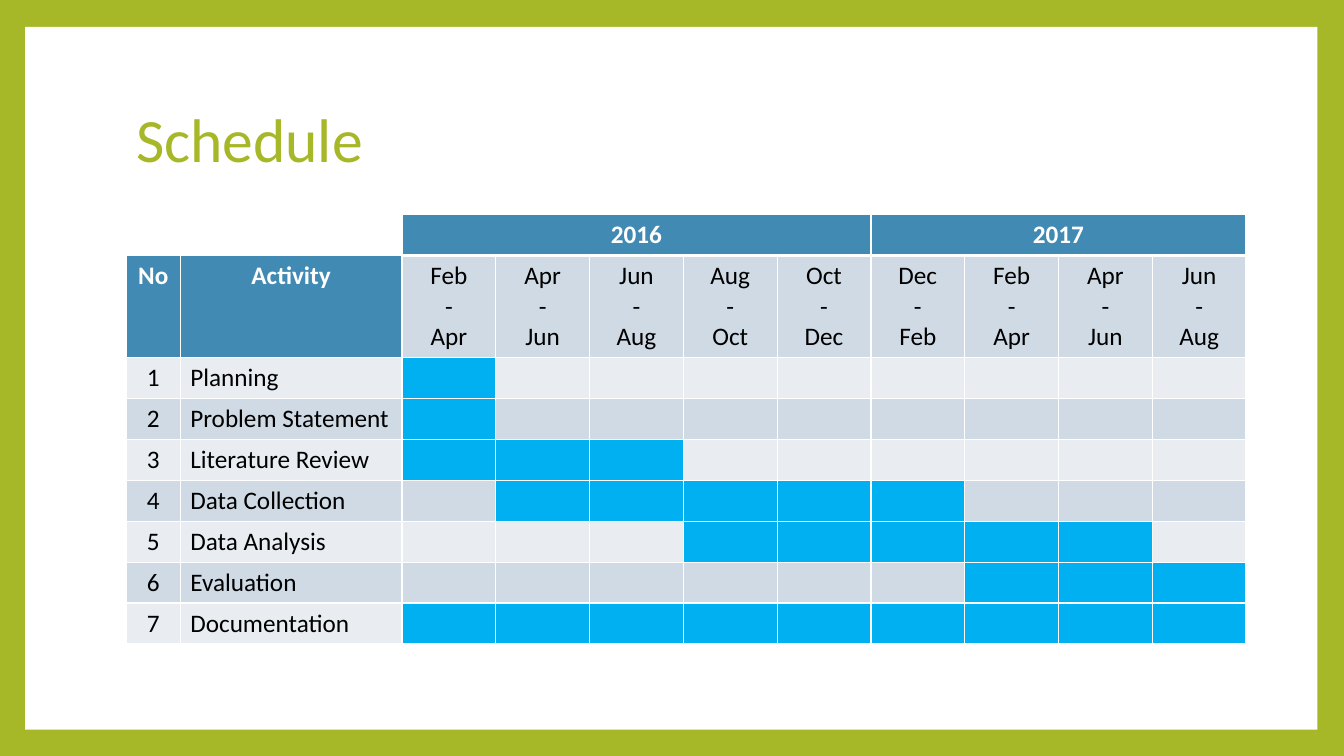
from lxml import etree
from pptx import Presentation
from pptx.dml.color import RGBColor
from pptx.enum.shapes import MSO_SHAPE
from pptx.enum.text import MSO_ANCHOR, PP_ALIGN
from pptx.oxml.ns import qn
from pptx.util import Pt

LEFT, CENTER = PP_ALIGN.LEFT, PP_ALIGN.CENTER
MIDDLE = MSO_ANCHOR.MIDDLE
RECTANGLE = MSO_SHAPE.RECTANGLE

COLORS = {
    "green": "A6B727",
    "white": "FFFFFF",
    "black": "000000",
    "header": "418AB3",
    "band_dark": "CFDAE5",
    "band_light": "E9EDF2",
    "bar": "00B0F0",
}
FONT = "Calibri"

MONTHS = ["Feb", "Apr", "Jun", "Aug", "Oct", "Dec"]
PERIOD_COUNT = 9
FIRST_PERIOD_COLUMN = 2
FIRST_ACTIVITY_ROW = 2
# Year, first and last period
YEARS = [("2016", 0, 4), ("2017", 5, 8)]
# Activity, first and last period
ACTIVITIES = [
    ("Planning", 0, 0),
    ("Problem Statement", 0, 0),
    ("Literature Review", 0, 2),
    ("Data Collection", 1, 5),
    ("Data Analysis", 3, 7),
    ("Evaluation", 6, 8),
    ("Documentation", 0, 8),
]


def write(text_frame, text, size=18, color="black", bold=False, align=CENTER):
    text_frame.text = text
    text_frame.vertical_anchor = MIDDLE
    for paragraph in text_frame.paragraphs:
        paragraph.alignment = align
        font = paragraph.runs[0].font
        font.name = FONT
        font.size = Pt(size)
        font.bold = bold
        font.color.rgb = RGBColor.from_string(COLORS[color])


def style_cell(cell, fill, borders):
    """Fill a cell and draw its white borders, given as {side: points}."""
    properties = cell._tc.get_or_add_tcPr()
    for side in "LRTB":
        if side in borders:
            line = etree.SubElement(properties, qn(f"a:ln{side}"), w=str(Pt(borders[side])))
            line_fill = etree.SubElement(line, qn("a:solidFill"))
            etree.SubElement(line_fill, qn("a:srgbClr"), val=COLORS["white"])
    cell.fill.solid()
    cell.fill.fore_color.rgb = RGBColor.from_string(COLORS[fill])


presentation = Presentation()
presentation.slide_width, presentation.slide_height = Pt(960), Pt(540)
slide = presentation.slides.add_slide(presentation.slide_layouts[5])
slide.background.fill.solid()
slide.background.fill.fore_color.rgb = RGBColor.from_string(COLORS["green"])

# Title on a white panel
title = slide.shapes.title
title.left, title.top, title.width, title.height = Pt(90), Pt(48), Pt(778), Pt(107)
write(title.text_frame, "Schedule", size=44, color="green", align=LEFT)
title.text_frame.paragraphs[0].line_spacing = 0.9

panel = slide.shapes.add_shape(RECTANGLE, Pt(18), Pt(19.2), Pt(923), Pt(502))
panel.shadow.inherit = False
panel.fill.solid()
panel.fill.fore_color.rgb = RGBColor.from_string(COLORS["white"])
panel.line.fill.background()
title.element.addprevious(panel.element)

# Schedule table
column_widths = [38.6, 158.4] + [67] * PERIOD_COUNT
row_heights = [29.2, 73.2] + [29.2] * len(ACTIVITIES)
table = slide.shapes.add_table(
    len(row_heights), len(column_widths), Pt(90.2), Pt(153.2),
    Pt(sum(column_widths)), Pt(sum(row_heights)),
).table
table.first_row = table.horz_banding = False
for column, width in zip(table.columns, column_widths):
    column.width = Pt(width)
for row, height in zip(table.rows, row_heights):
    row.height = Pt(height)

# Year headers
for column in range(FIRST_PERIOD_COLUMN):
    style_cell(table.cell(0, column), "white", {})
for year, first, last in YEARS:
    first_column, last_column = FIRST_PERIOD_COLUMN + first, FIRST_PERIOD_COLUMN + last
    for column in range(first_column, last_column + 1):
        style_cell(table.cell(0, column), "header", {"L": 1, "R": 1, "T": 1, "B": 3})
    year_cell = table.cell(0, first_column)
    year_cell.merge(table.cell(0, last_column))
    write(year_cell.text_frame, year, color="white", bold=True)

# Column headers
for column, heading in enumerate(["No", "Activity"]):
    cell = table.cell(1, column)
    style_cell(cell, "header", {"L": 1, "R": 1, "B": 1})
    write(cell.text_frame, heading, color="white", bold=True)

all_sides = dict.fromkeys("LRTB", 1)
for period in range(PERIOD_COUNT):
    start, end = (MONTHS[(period + step) % len(MONTHS)] for step in (0, 1))
    # The year header's thick line forms the top border
    cell = table.cell(1, FIRST_PERIOD_COLUMN + period)
    style_cell(cell, "band_dark", {**all_sides, "T": 3})
    write(cell.text_frame, f"{start}\n-\n{end}")

# Activities and their bars
for index, (activity, first, last) in enumerate(ACTIVITIES):
    row = FIRST_ACTIVITY_ROW + index
    band = "band_dark" if index % 2 else "band_light"
    for column in range(len(column_widths)):
        active = first <= column - FIRST_PERIOD_COLUMN <= last
        style_cell(table.cell(row, column), "bar" if active else band, all_sides)
    write(table.cell(row, 0).text_frame, str(index + 1))
    write(table.cell(row, 1).text_frame, activity, align=LEFT)

presentation.save("out.pptx")
